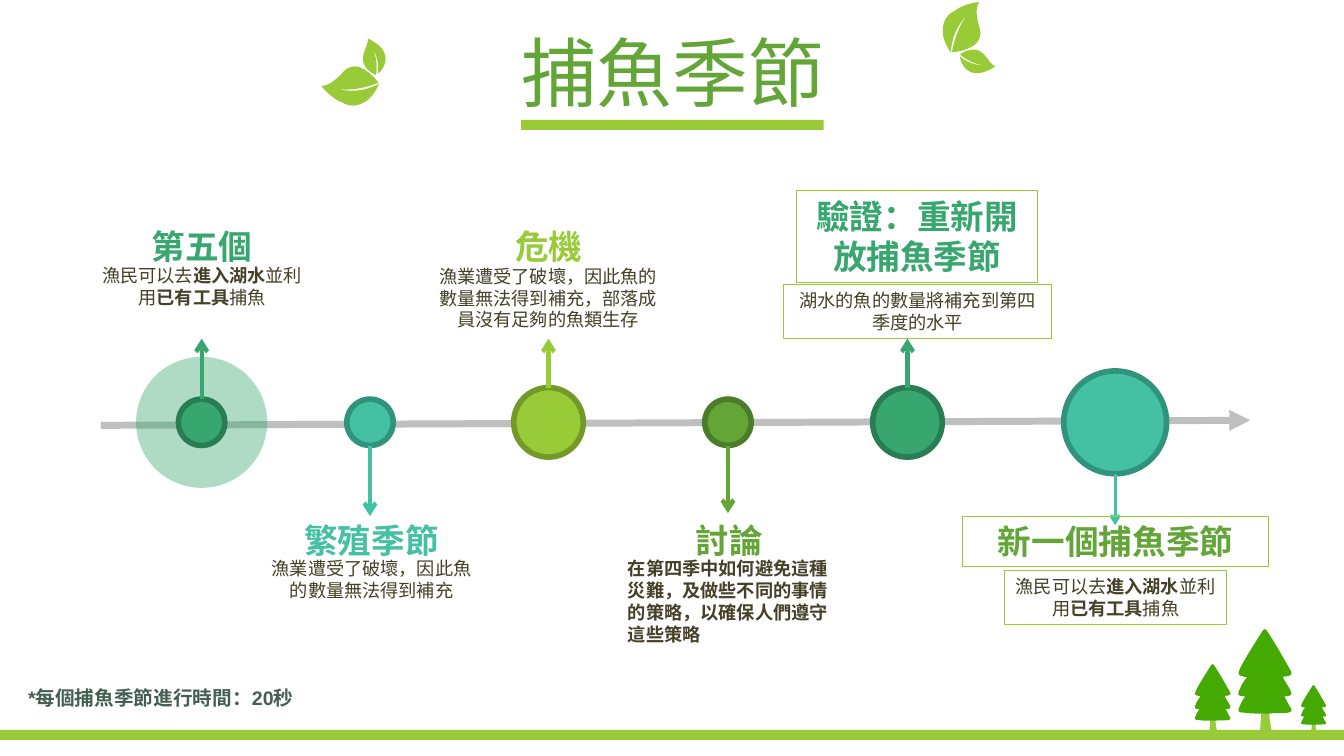
import math

import lxml.etree
import pptx
import pptx.dml.color
import pptx.enum.shapes
import pptx.enum.text
import pptx.oxml.ns
import pptx.util

Inches = pptx.util.Inches
RGBColor = pptx.dml.color.RGBColor
Shape = pptx.enum.shapes.MSO_SHAPE
Align = pptx.enum.text.PP_ALIGN
qn = pptx.oxml.ns.qn

FONT = "Arial"
LIME = RGBColor(0x99, 0xCB, 0x38)
DARK_LIME = RGBColor(0x73, 0x9A, 0x28)
GREEN = RGBColor(0x63, 0xA5, 0x37)
DARK_GREEN = RGBColor(0x4A, 0x7C, 0x29)
JADE = RGBColor(0x37, 0xA7, 0x6F)
DARK_JADE = RGBColor(0x29, 0x7D, 0x53)
TEAL = RGBColor(0x44, 0xC1, 0xA3)
DARK_TEAL = RGBColor(0x31, 0x93, 0x7B)
TREE_GREEN = RGBColor(0x44, 0xA9, 0x00)
AXIS_GREY = RGBColor(0xBF, 0xBF, 0xBF)
BODY_BROWN = RGBColor(0x45, 0x40, 0x27)
NOTE_GREEN = RGBColor(0x45, 0x5F, 0x51)

AXIS_Y = 4.19

# Outlines: a start point, then three points for each Bézier curve.
# Trees are in hundredths of an inch from the middle of the canopy's base.
CANOPY = [
    (-4, 0), (-9, 0), (-15, 0), (-21, -1), (-27, -1), (-28, -2), (-25, -8),
    (-24, -11), (-22, -14), (-20, -17), (-28, -18), (-28, -18), (-25, -25),
    (-24, -28), (-21, -33), (-18, -36), (-28, -38), (-28, -38), (-24, -47),
    (-18, -58), (-11, -69), (-4, -80), (-1, -85), (0, -85), (3, -80),
    (11, -68), (18, -55), (25, -43), (27, -39), (26, -38), (21, -37),
    (17, -37), (17, -36), (19, -33), (21, -30), (22, -28), (24, -25),
    (27, -18), (27, -18), (19, -17), (21, -13), (23, -9), (25, -6),
    (27, -3), (26, -2), (23, -1), (17, 0), (10, -1), (4, 0),
    (1, 1), (-1, 1), (-4, 0)]
TRUNK = [
    (-4, 0), (-1, 0), (1, 0), (4, 0), (4, 5), (5, 10), (6, 15),
    (6, 19), (4, 21), (0, 21), (-3, 22), (-6, 19), (-5, 15),
    (-5, 10), (-4, 5), (-4, 0)]
# Leaves are in inches, placed as the right-hand pair.
LARGE_LEAF = [
    (9.43, .52), (9.44, .36), (9.5, .24), (9.61, .13), (9.54, .21), (9.48, .32), (9.44, .52),
    (9.52, .51), (9.58, .5), (9.66, .45), (9.72, .41), (9.74, .33), (9.71, .26),
    (9.69, .18), (9.67, .09), (9.71, .02), (9.63, .03), (9.53, .06), (9.48, .1),
    (9.38, .15), (9.35, .22), (9.35, .31), (9.35, .39), (9.39, .46), (9.43, .52)]
SMALL_LEAF = [
    (9.78, .65), (9.68, .65), (9.59, .62), (9.52, .56), (9.53, .64), (9.58, .7), (9.64, .72),
    (9.72, .74), (9.79, .71), (9.87, .66), (9.81, .63), (9.78, .53), (9.7, .5),
    (9.64, .48), (9.58, .5), (9.52, .54), (9.59, .6), (9.67, .64), (9.78, .65)]
LEAF_PIVOT = (9.575, 0.275)

FISHING = [("漁民可以去", False), ("進入湖水", True), ("並利用", False),
           ("已有工具", True), ("捕魚", False)]

# Middle, diameter, fill, outline, end of arrow, width of arrow.
MILESTONES = [
    (11.06, 1.02, TEAL, DARK_TEAL, 5.21, 2.25),
    (9, 0.69, JADE, DARK_JADE, 3.36, 3),
    (7.22, 0.46, GREEN, DARK_GREEN, 5.09, 3),
    (5.44, 0.69, LIME, DARK_LIME, 3.36, 3),
    (3.67, 0.46, TEAL, DARK_TEAL, 5.12, 3),
    (2, 0.46, JADE, DARK_JADE, 3.36, 3)]

# Heading, its colour and area, then the runs of the body, its area, and whether framed.
CAPTIONS = [
    ("第五個", JADE, (0.9, 2.19, 2.21, 0.5), FISHING, (0.9, 2.57, 2.21, 0.54), False),
    ("危機", LIME, (4.34, 2.19, 2.21, 0.5),
     [("漁業遭受了破壞，因此魚的數量無法得到補充，部落成員沒有足夠的魚類生存", False)],
     (4.21, 2.58, 2.45, 0.76), False),
    ("驗證：重新開放捕魚季節", JADE, (7.9, 1.89, 2.39, 0.91),
     [("湖水的魚的數量將補充到第四季度的水平", False)], (7.77, 2.82, 2.66, 0.54), True),
    ("繁殖季節", TEAL, (2.58, 5.11, 2.21, 0.5),
     [("漁業遭受了破壞，因此魚的數量無法得到補充", False)], (2.58, 5.48, 2.21, 0.54), False),
    ("討論", GREEN, (6.13, 5.11, 2.21, 0.5),
     [("在第四季中如何避免這種災難，及做些不同的事情的策略，以確保人們遵守這些策略", True)],
     (6.13, 5.48, 2.21, 0.98), False),
    ("新一個捕魚季節", GREEN, (9.55, 5.12, 3.03, 0.5), FISHING, (9.96, 5.66, 2.21, 0.54), True)]


def add_runs(para, runs, size, color):
    for text, bold in runs:
        span = para.add_run()
        span.text = text
        span.font.name = FONT
        span.font.size = pptx.util.Pt(size)
        span.font.bold = bold
        span.font.color.rgb = color


def add_title(page, text):
    title = page.shapes.title
    title.left, title.top, title.width, title.height = map(Inches, (0.34, 0.37, 12.66, 0.79))
    title.text_frame.auto_size = pptx.enum.text.MSO_AUTO_SIZE.NONE
    title.text_frame.vertical_anchor = pptx.enum.text.MSO_ANCHOR.MIDDLE
    para = title.text_frame.paragraphs[0]
    para.alignment = Align.CENTER
    para.line_spacing = 0.9
    add_runs(para, [(text, False)], 54, GREEN)


def add_text(page, area, runs, size, color, align=Align.CENTER, framed=False):
    box = page.shapes.add_textbox(*map(Inches, area))
    box.text_frame.word_wrap = True
    box.text_frame.auto_size = pptx.enum.text.MSO_AUTO_SIZE.SHAPE_TO_FIT_TEXT
    if framed:
        box.line.color.rgb = LIME
        box.line.width = pptx.util.Pt(0.75)
    para = box.text_frame.paragraphs[0]
    para.alignment = align
    add_runs(para, runs, size, color)


def paint(shape, fill, line=None):
    shape.shadow.inherit = False
    shape.fill.solid()
    shape.fill.fore_color.rgb = fill
    if line is None:
        shape.line.fill.background()
    else:
        shape.line.color.rgb = line
        shape.line.width = pptx.util.Pt(4)


def add_bar(page, left, top, width):
    paint(page.shapes.add_shape(Shape.RECTANGLE, *map(Inches, (left, top, width, 0.1))), LIME)


def add_circle(page, middle, diameter, fill, line=None):
    area = (middle - diameter / 2, AXIS_Y - diameter / 2, diameter, diameter)
    circle = page.shapes.add_shape(Shape.OVAL, *map(Inches, area))
    paint(circle, fill, line)
    return circle


def add_halo(page):
    halo = add_circle(page, 2, 1.3, JADE)
    color = halo.fill._xPr.find(qn("a:solidFill"))[0]
    lxml.etree.SubElement(color, qn("a:alpha"), val="40000")


def add_arrow(page, start, end, color, width, head):
    ends = map(Inches, (*start, *end))
    arrow = page.shapes.add_connector(pptx.enum.shapes.MSO_CONNECTOR.STRAIGHT, *ends)
    arrow.line.color.rgb = color
    arrow.line.width = pptx.util.Pt(width)
    lxml.etree.SubElement(arrow.line._get_or_add_ln(), qn("a:tailEnd"), type=head)
    lxml.etree.SubElement(arrow._element.spPr, qn("a:effectLst"))


def flatten(outline, steps=6):
    """Turn a chain of cubic Bézier curves into points."""
    points = [outline[0]]
    for first in range(0, len(outline) - 1, 3):
        controls = outline[first:first + 4]
        for step in range(1, steps + 1):
            t = step / steps
            weights = ((1 - t) ** 3, 3 * t * (1 - t) ** 2, 3 * t * t * (1 - t), t ** 3)
            points.append(tuple(sum(w * c[axis] for w, c in zip(weights, controls))
                                for axis in (0, 1)))
    return points


def add_outline(page, outline, color):
    points = [(Inches(x), Inches(y)) for x, y in flatten(outline)]
    builder = page.shapes.build_freeform(*points[0])
    builder.add_line_segments(points[1:], close=True)
    paint(builder.convert_to_shape(), color)


def add_tree(page, middle, base, scale):
    for outline, color in ((CANOPY, TREE_GREEN), (TRUNK, LIME)):
        placed = [(middle + x * scale / 100, base + y * scale / 100) for x, y in outline]
        add_outline(page, placed, color)


def add_leaves(page, pivot, degrees):
    """Draw the pair of leaves turned about the large leaf's middle, moved to pivot."""
    cos, sin = math.cos(math.radians(degrees)), math.sin(math.radians(degrees))
    for outline in (LARGE_LEAF, SMALL_LEAF):
        offsets = [(x - LEAF_PIVOT[0], y - LEAF_PIVOT[1]) for x, y in outline]
        add_outline(page, [(pivot[0] + x * cos - y * sin, pivot[1] + x * sin + y * cos)
                           for x, y in offsets], LIME)


def main():
    deck = pptx.Presentation()
    deck.slide_width, deck.slide_height = Inches(13.33), Inches(7.5)
    page = deck.slides.add_slide(deck.slide_layouts[5])
    add_title(page, "捕魚季節")
    for middle, base, scale in ((12.55, 7.08, 1), (13.03, 7.19, 0.47), (12.03, 7.15, 0.67)):
        add_tree(page, middle, base, scale)
    add_leaves(page, LEAF_PIVOT, 0)
    add_leaves(page, (3.475, 0.835), 238.6)
    add_bar(page, 5.17, 1.19, 3)
    add_bar(page, 0, 7.24, 13.33)

    add_arrow(page, (1, 4.22), (12.4, 4.17), AXIS_GREY, 5, "triangle")
    add_halo(page)
    for middle, diameter, fill, line, tip, width in MILESTONES:
        add_circle(page, middle, diameter, fill, line)
        edge = AXIS_Y + math.copysign(diameter / 2, tip - AXIS_Y)
        add_arrow(page, (middle, edge), (middle, tip), fill, width, "arrow")
    for heading, color, heading_area, body, body_area, framed in CAPTIONS:
        add_text(page, heading_area, [(heading, True)], 24, color, framed=framed)
        align = Align.LEFT if heading == "討論" else Align.CENTER
        add_text(page, body_area, body, 13, BODY_BROWN, align, framed)
    add_text(page, (0.18, 6.76, 5.73, 0.34), [("*每個捕魚季節進行時間：20秒", True)],
             14, NOTE_GREEN, Align.LEFT)
    deck.save("out.pptx")


if __name__ == "__main__":
    main()
